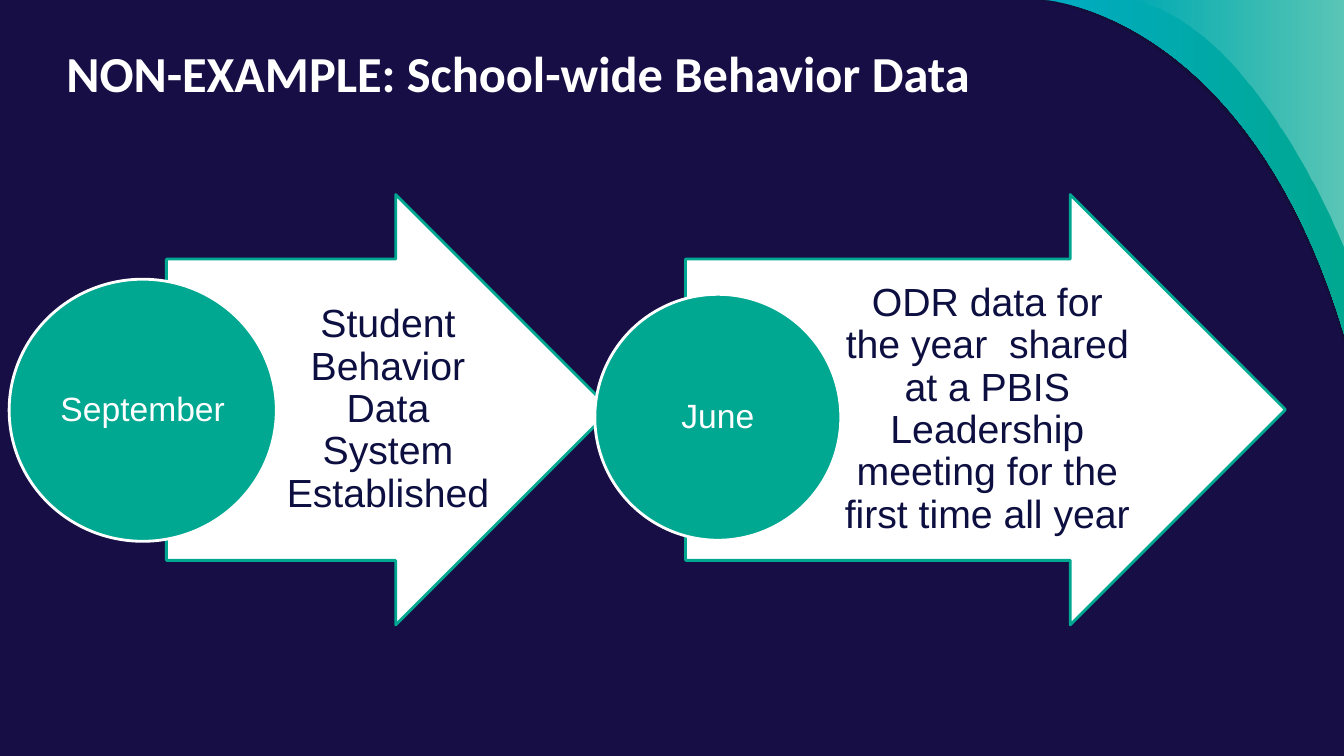
from lxml.etree import SubElement
from pptx import Presentation
from pptx.dml.color import RGBColor as Rgb
from pptx.enum.shapes import MSO_SHAPE as Shape
from pptx.enum.text import MSO_ANCHOR as Anchor, PP_ALIGN as Align
from pptx.oxml.ns import qn
from pptx.util import Inches, Pt

COLORS = {name: Rgb.from_string(code) for name, code in {
    "night": "160E44", "shade": "12102F", "cyan": "00ACC2",
    "teal": "00A791", "white": "FFFFFF", "ink": "0D0F41"}.items()}

deck = Presentation()
deck.slide_width, deck.slide_height = Inches(13.33), Inches(7.5)
COL, ROW = deck.slide_width / 100, deck.slide_height / 100
page = deck.slides.add_slide(deck.slide_layouts[6])
page.background.fill.solid()
page.background.fill.fore_color.rgb = COLORS["night"]


def area(left, top, width, height):
    return [round(v) for v in (left * COL, top * ROW, width * COL, height * ROW)]


def write(shape, text, font, size, color, insets, align=Align.CENTER, bold=False):
    frame = shape.text_frame
    frame.word_wrap = True
    frame.vertical_anchor = Anchor.MIDDLE
    (frame.margin_left, frame.margin_top,
     frame.margin_right, frame.margin_bottom) = [Inches(v) for v in insets]
    para = frame.paragraphs[0]
    para.alignment = align
    para.line_spacing = 0.9
    span = para.add_run()
    span.text = text
    span.font.name, span.font.size, span.font.bold = font, Pt(size), bold
    span.font.color.rgb = COLORS[color]


STEPS = 40
swooshes = [
    ([(77.19, 0), (77.19, 0), (92.65, 1.47), (100, 45.2)], ["shade"], [54]),
    ([(77.72, 0), (77.72, 0), (92.8, 1.47), (100, 44.13)], ["cyan", "teal"], [100, 100]),
    ([(83.72, 0), (93.1, 2), (100, 32.67), (100, 32.67)], ["white", "white"], [0, 36]),
]
for curve, tones, opacities in swooshes:
    points = []
    for step in range(STEPS + 1):
        t = step / STEPS
        weights = [(1 - t) ** 3, 3 * t * (1 - t) ** 2, 3 * t * t * (1 - t), t ** 3]
        points.append((sum(w * x for w, (x, y) in zip(weights, curve)) * COL,
                       sum(w * y for w, (x, y) in zip(weights, curve)) * ROW))
    builder = page.shapes.build_freeform(*map(round, points[0]))
    builder.add_line_segments([(round(x), round(y)) for x, y in points[1:]]
                              + [(deck.slide_width, 0)], close=True)
    swoosh = builder.convert_to_shape()
    swoosh.shadow.inherit = False
    swoosh.line.fill.background()
    if len(tones) == 1:
        swoosh.fill.solid()
        swoosh.fill.fore_color.rgb = COLORS[tones[0]]
    else:
        swoosh.fill.gradient()
        swoosh.fill.gradient_angle = 0
        for stop, tone in zip(swoosh.fill.gradient_stops, tones):
            stop.color.rgb = COLORS[tone]
    for color, opacity in zip(swoosh._element.spPr.iter(qn("a:srgbClr")), opacities):
        SubElement(color, qn("a:alpha"), val=str(opacity * 1000))

title = page.shapes.add_textbox(*area(4.2, 4, 72.69, 12.27))
write(title, "NON-EXAMPLE: School-wide Behavior Data", "Calibri", 36, "white",
      [0.1] * 4, Align.LEFT, True)

ARROW_TOP, ARROW_HEIGHT, SHAFT = 25.73, 56.93, 0.7
stages = [
    ("September", "Student Behavior Data System Established",
     12.38, 33.08, 16.13, (0.68, 36.93, 19.88, 34.67)),
    ("June", "ODR data for the year  shared at a PBIS Leadership meeting "
     "for the first time all year",
     51.01, 44.64, 22.28, (44.26, 38.93, 18.3, 32.53)),
]
for month, event, left, width, text_width, circle in stages:
    arrow = page.shapes.add_shape(
        Shape.RIGHT_ARROW, *area(left, ARROW_TOP, width, ARROW_HEIGHT))
    arrow.adjustments[0], arrow.adjustments[1] = SHAFT, 0.5
    box = page.shapes.add_textbox(*area(
        left + width / 4, ARROW_TOP + ARROW_HEIGHT * (1 - SHAFT) / 2,
        text_width, ARROW_HEIGHT * SHAFT))
    write(box, event, "Arial", 28, "ink", [0.08, 0.02, 0.04, 0.02])
    badge = page.shapes.add_shape(Shape.OVAL, *area(*circle))
    write(badge, month, "Arial", 24, "white", [0.02] * 4)
    for shape, fill, line in [(arrow, "white", "teal"), (badge, "teal", "white")]:
        shape.shadow.inherit = False
        shape.fill.solid()
        shape.fill.fore_color.rgb = COLORS[fill]
        shape.line.color.rgb = COLORS[line]
        shape.line.width = Pt(2)

deck.save("out.pptx")
